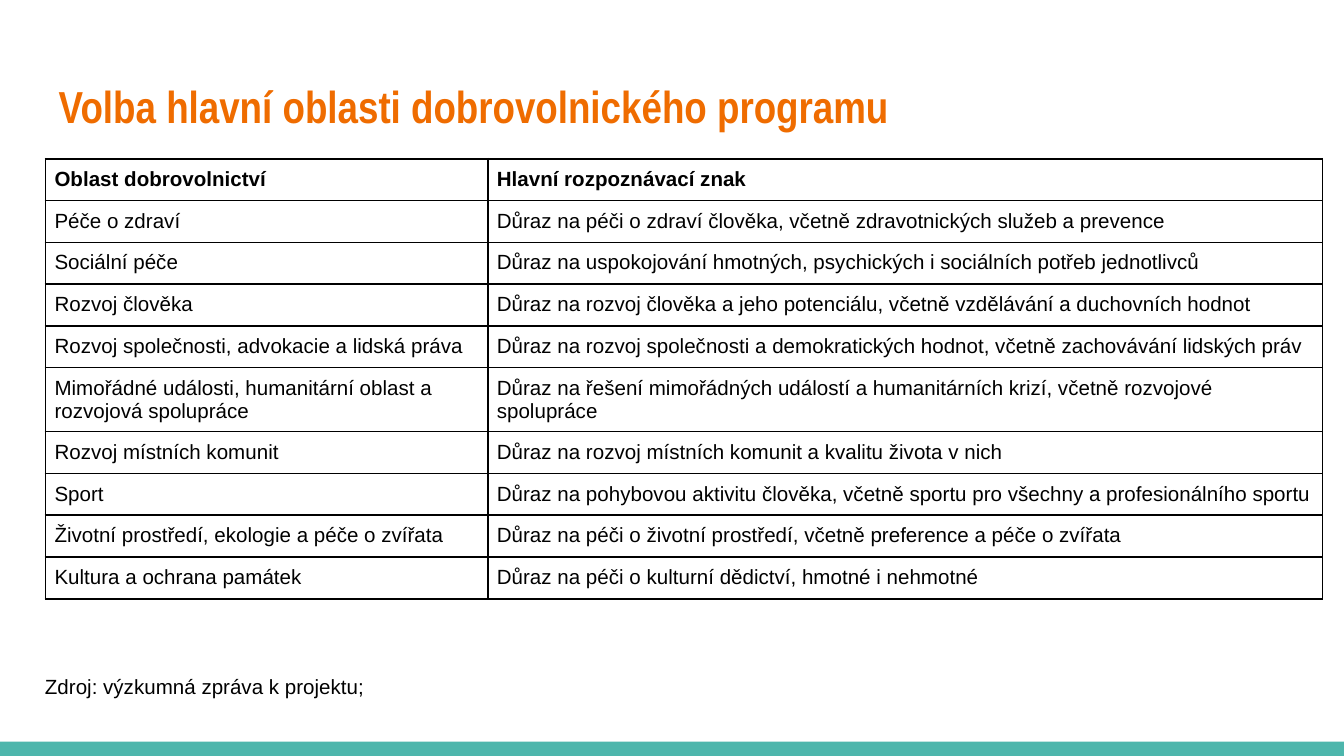
from lxml import etree
from pptx import Presentation
from pptx.dml.color import RGBColor
from pptx.enum.shapes import MSO_SHAPE
from pptx.enum.text import MSO_ANCHOR, MSO_AUTO_SIZE, PP_ALIGN
from pptx.oxml.ns import qn
from pptx.util import Cm, Pt

RECTANGLE = MSO_SHAPE.RECTANGLE
TOP = MSO_ANCHOR.TOP
NO_FIT = MSO_AUTO_SIZE.NONE
LEFT = PP_ALIGN.LEFT

TITLE = "Volba hlavní oblasti dobrovolnického programu"
SOURCE = "Zdroj: výzkumná zpráva k projektu;"
ROWS = [
    ("Oblast dobrovolnictví", "Hlavní rozpoznávací znak"),
    ("Péče o zdraví",
     "Důraz na péči o zdraví člověka, včetně zdravotnických služeb a prevence"),
    ("Sociální péče",
     "Důraz na uspokojování hmotných, psychických i sociálních potřeb jednotlivců"),
    ("Rozvoj člověka",
     "Důraz na rozvoj člověka a jeho potenciálu, včetně vzdělávání a duchovních hodnot"),
    ("Rozvoj společnosti, advokacie a lidská práva",
     "Důraz na rozvoj společnosti a demokratických hodnot, včetně zachovávání lidských práv"),
    ("Mimořádné události, humanitární oblast a rozvojová spolupráce",
     "Důraz na řešení mimořádných událostí a humanitárních krizí, včetně rozvojové spolupráce"),
    ("Rozvoj místních komunit",
     "Důraz na rozvoj místních komunit a kvalitu života v nich"),
    ("Sport",
     "Důraz na pohybovou aktivitu člověka, včetně sportu pro všechny a profesionálního sportu"),
    ("Životní prostředí, ekologie a péče o zvířata",
     "Důraz na péči o životní prostředí, včetně preference a péče o zvířata"),
    ("Kultura a ochrana památek",
     "Důraz na péči o kulturní dědictví, hmotné i nehmotné"),
]
COLORS = {"title": "EF6C00", "text": "000000", "border": "000000", "bar": "4DB6AC"}
COL_WIDTHS = (8.36, 15.77)
ROW_HEIGHT, TALL_ROW_HEIGHT = 0.79, 1.21
TALL_ROW = 5
SLIDE_W, SLIDE_H, BAR_H = 25.4, 14.29, 0.27


def write(tf, text, size, color, font="Arial", bold=False, inset=0.25):
    tf.margin_left = tf.margin_right = tf.margin_top = tf.margin_bottom = Cm(inset)
    tf.word_wrap = True
    tf.vertical_anchor = TOP
    p = tf.paragraphs[0]
    p.alignment = LEFT
    r = p.add_run()
    r.text = text
    r.font.size = Pt(size)
    r.font.name = font
    r.font.bold = bold
    r.font.color.rgb = RGBColor.from_string(COLORS[color])
    return p


def add_borders(cell):
    tc_pr = cell._tc.get_or_add_tcPr()
    for i, side in enumerate(("a:lnL", "a:lnR", "a:lnT", "a:lnB")):
        ln = etree.Element(qn(side), w=str(Pt(1)))
        fill = etree.SubElement(ln, qn("a:solidFill"))
        etree.SubElement(fill, qn("a:srgbClr"), val=COLORS["border"])
        tc_pr.insert(i, ln)


prs = Presentation()
prs.slide_width, prs.slide_height = Cm(SLIDE_W), Cm(SLIDE_H)
s = prs.slides.add_slide(prs.slide_layouts[5])

bar = s.shapes.add_shape(RECTANGLE, 0, Cm(SLIDE_H - BAR_H), Cm(SLIDE_W), Cm(BAR_H))
bar.shadow.inherit = False
bar.fill.solid()
bar.fill.fore_color.rgb = RGBColor.from_string(COLORS["bar"])
bar.line.fill.background()

title = s.shapes.title
title.left, title.top, title.width, title.height = Cm(0.86), Cm(1.24), Cm(23.67), Cm(1.96)
title.text_frame.auto_size = NO_FIT
write(title.text_frame, TITLE, 24, "title", "Arial Narrow", True)

heights = [TALL_ROW_HEIGHT if i == TALL_ROW else ROW_HEIGHT for i in range(len(ROWS))]
table = s.shapes.add_table(len(ROWS), len(COL_WIDTHS), Cm(0.86), Cm(3),
                           Cm(sum(COL_WIDTHS)), Cm(sum(heights))).table
table.horz_banding = False
for column, width in zip(table.columns, COL_WIDTHS):
    column.width = Cm(width)
for i, (row, height, texts) in enumerate(zip(table.rows, heights, ROWS)):
    row.height = Cm(height)
    for cell, text in zip(row.cells, texts):
        write(cell.text_frame, text, 11, "text", bold=i == 0)
        cell.margin_left = cell.margin_right = Cm(0.17)
        cell.margin_top = cell.margin_bottom = Cm(0.17)
        cell.vertical_anchor = TOP
        cell.fill.background()
        add_borders(cell)

source = s.shapes.add_textbox(Cm(0.6), Cm(12.42), Cm(14.07), Cm(1.24))
write(source.text_frame, SOURCE, 11, "text").line_spacing = 1.15

prs.save("out.pptx")
